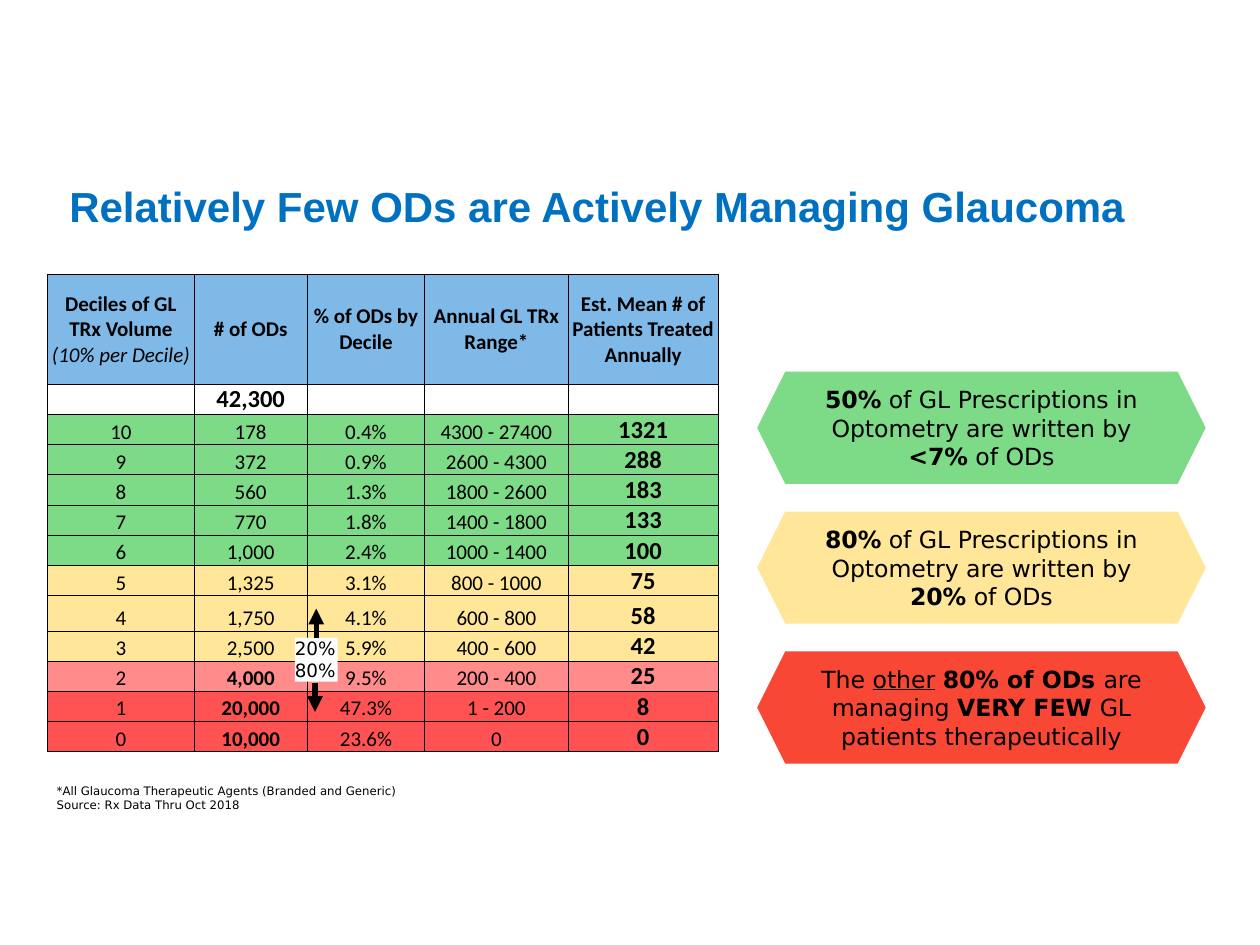
from lxml import etree
from pptx import Presentation
from pptx.dml.color import RGBColor
from pptx.enum.shapes import MSO_CONNECTOR, MSO_SHAPE
from pptx.enum.text import MSO_ANCHOR, MSO_AUTO_SIZE, PP_ALIGN
from pptx.oxml.ns import qn
from pptx.util import Inches, Pt

LEFT, CENTER = PP_ALIGN.LEFT, PP_ALIGN.CENTER
MIDDLE, BOTTOM, TOP = MSO_ANCHOR.MIDDLE, MSO_ANCHOR.BOTTOM, MSO_ANCHOR.TOP
HEXAGON, STRAIGHT = MSO_SHAPE.HEXAGON, MSO_CONNECTOR.STRAIGHT
FIT_SHAPE, NO_FIT = MSO_AUTO_SIZE.SHAPE_TO_FIT_TEXT, MSO_AUTO_SIZE.NONE

THEME = {
    "title": "0070C0", "black": "000000", "white": "FFFFFF", "header": "7FB9E8",
    "green": "7DDA86", "yellow": "FFE699", "pink": "FF8B8B", "red": "FF5353",
    "alert": "F84734",
    "title_font": "Arial", "table_font": "Calibri", "body_font": "DejaVu Sans",
    "title_size": 24, "cell_size": 12, "strong_size": 14,
    "callout_size": 13.5, "split_size": 10.5, "note_size": 6.75,
}

TITLE = "Relatively Few ODs are Actively Managing Glaucoma"
# A span is (text, styles): b bold, i italic, u underlined.
HEADERS = [
    [("Deciles of GL TRx Volume\v", "b"), ("(10% per Decile)", "i")],
    [("# of ODs", "b")],
    [("% of ODs by Decile", "b")],
    [("Annual GL TRx Range*", "b")],
    [("Est. Mean # of Patients Treated Annually", "b")],
]
TOTAL = ("", "42,300", "", "", "")
DECILES = [
    ("green", "10", "178", "0.4%", "4300 - 27400", "1321"),
    ("green", "9", "372", "0.9%", "2600 - 4300", "288"),
    ("green", "8", "560", "1.3%", "1800 - 2600", "183"),
    ("green", "7", "770", "1.8%", "1400 - 1800", "133"),
    ("green", "6", "1,000", "2.4%", "1000 - 1400", "100"),
    ("yellow", "5", "1,325", "3.1%", "800 - 1000", "75"),
    ("yellow", "4", "1,750", "4.1%", "600 - 800", "58"),
    ("yellow", "3", "2,500", "5.9%", "400 - 600", "42"),
    ("pink", "2", "4,000", "9.5%", "200 - 400", "25"),
    ("red", "1", "20,000", "47.3%", "1 - 200", "8"),
    ("red", "0", "10,000", "23.6%", "0", "0"),
]
COUNT_COLUMN, PATIENTS_COLUMN = 1, 4
BOLD_COUNT_FILLS = ("pink", "red")
COLUMN_WIDTHS = (1.16, 0.9, 0.93, 1.14, 1.19)
HEADER_HEIGHT, ROW_HEIGHT, TALL_HEIGHT = 0.87, 0.24, 0.28
TALL_DECILE = "4"

CALLOUTS = [
    ("green", [("50%", "b"), (" of GL Prescriptions in Optometry are written by ", ""),
               ("<7%", "b"), (" of ODs", "")]),
    ("yellow", [("80%", "b"), (" of GL Prescriptions in Optometry are written by ", ""),
                ("20%", "b"), (" of ODs", "")]),
    ("alert", [("The ", ""), ("other", "u"), (" ", ""), ("80% of ODs ", "b"),
               ("are managing ", ""), ("VERY FEW ", "b"),
               ("GL patients therapeutically", "")]),
]
NOTES = ["*All Glaucoma Therapeutic Agents (Branded and Generic)",
         "Source: Rx Data Thru Oct 2018"]
SPLIT = ["20%", "80%"]
SPLIT_ARROWS = [(2.51, 5.06, 4.83), (2.5, 5.42, 5.65)]  # x, start y, end y


def color(name):
    return RGBColor.from_string(THEME[name])


def paint(item, name):
    item.fill.solid()
    item.fill.fore_color.rgb = color(name)


def write(frame, paragraphs, font="body_font", size="callout_size", ink="black",
          align=LEFT, spacing=None, gap=None):
    """Fill a text frame; each paragraph is a plain string or a list of spans."""
    for index, spans in enumerate(paragraphs):
        para = frame.add_paragraph() if index else frame.paragraphs[0]
        para.alignment = align
        if spacing:
            para.line_spacing = spacing
        if gap:
            para.space_before = para.space_after = Pt(gap)
        if not spans:
            etree.SubElement(para._p, qn("a:endParaRPr"), sz=str(THEME[size] * 100))
            continue
        for text, styles in [(spans, "")] if isinstance(spans, str) else spans:
            for number, line in enumerate(text.split("\v")):
                if number:
                    para.add_line_break()
                if line:
                    span = para.add_run()
                    span.text = line
                    span.font.name = THEME[font]
                    span.font.size = Pt(THEME[size])
                    span.font.color.rgb = color(ink)
                    span.font.bold = "b" in styles
                    span.font.italic = "i" in styles
                    span.font.underline = "u" in styles


def set_margins(item, left, top, right, bottom):
    item.margin_left, item.margin_top = Inches(left), Inches(top)
    item.margin_right, item.margin_bottom = Inches(right), Inches(bottom)


def add_borders(cell):
    properties = cell._tc.get_or_add_tcPr()
    for side in ("a:lnL", "a:lnR", "a:lnT", "a:lnB"):
        line = etree.SubElement(properties, qn(side), w=str(Pt(0.5)))
        fill = etree.SubElement(line, qn("a:solidFill"))
        etree.SubElement(fill, qn("a:srgbClr"), val=THEME["black"])


def fill_cell(cell, spans, fill, anchor=BOTTOM, size="cell_size", gap=None):
    add_borders(cell)
    paint(cell, fill)
    set_margins(cell, 0.01, 0, 0.01, 0)
    cell.vertical_anchor = anchor
    write(cell.text_frame, [spans], font="table_font", size=size, align=CENTER, gap=gap)


def add_decile_table(page):
    heights = [HEADER_HEIGHT, ROW_HEIGHT] + [
        TALL_HEIGHT if row[1] == TALL_DECILE else ROW_HEIGHT for row in DECILES]
    table = page.shapes.add_table(
        len(heights), len(COLUMN_WIDTHS), Inches(0.38), Inches(2.18),
        Inches(sum(COLUMN_WIDTHS)), Inches(sum(heights))).table
    for column, width in zip(table.columns, COLUMN_WIDTHS):
        column.width = Inches(width)
    for row, height in zip(table.rows, heights):
        row.height = Inches(height)
    for column, spans in enumerate(HEADERS):
        fill_cell(table.cell(0, column), spans, "header", anchor=MIDDLE,
                  gap=None if column else 6)
    for row, (fill, *values) in enumerate([("white", *TOTAL), *DECILES], start=1):
        for column, value in enumerate(values):
            strong = column == PATIENTS_COLUMN or fill == "white"
            bold = strong or (column == COUNT_COLUMN and fill in BOLD_COUNT_FILLS)
            fill_cell(table.cell(row, column),
                      [(value, "b" if bold else "")] if value else "", fill,
                      size="strong_size" if strong and value else "cell_size")


def add_callouts(page):
    top, pitch = 2.95, 1.11
    for index, (fill, spans) in enumerate(CALLOUTS):
        shape = page.shapes.add_shape(HEXAGON, Inches(6.01), Inches(top + index * pitch),
                                      Inches(3.56), Inches(0.89))
        shape.shadow.inherit = False
        paint(shape, fill)
        shape.line.fill.background()
        frame = shape.text_frame
        frame.word_wrap = True
        frame.vertical_anchor = MIDDLE
        set_margins(frame, 0.07, 0.04, 0.07, 0.04)
        write(frame, [spans], align=CENTER)


def add_label(shapes, lines, at, size):
    box = shapes.add_textbox(*map(Inches, at))
    frame = box.text_frame
    frame.word_wrap = False
    frame.auto_size = FIT_SHAPE
    frame.vertical_anchor = TOP
    set_margins(frame, 0, 0, 0, 0)
    write(frame, lines, size=size)
    return box


def add_split_marker(page):
    group = page.shapes.add_group_shape()
    paint(add_label(group.shapes, SPLIT, (2.34, 5.06, 0.34, 0.35), "split_size"), "white")
    for x, start, end in SPLIT_ARROWS:
        arrow = group.shapes.add_connector(STRAIGHT, Inches(x), Inches(start),
                                           Inches(x), Inches(end))
        arrow.line.color.rgb = color("black")
        arrow.line.width = Pt(3)
        etree.SubElement(arrow.line._get_or_add_ln(), qn("a:tailEnd"), type="triangle")
        etree.SubElement(arrow._element.spPr, qn("a:effectLst"))


def main():
    deck = Presentation()
    deck.slide_width, deck.slide_height = Inches(10), Inches(7.5)
    page = deck.slides.add_slide(deck.slide_layouts[5])
    title = page.shapes.title
    title.left, title.top = Inches(0.45), Inches(1.11)
    title.width, title.height = Inches(8.62), Inches(1.09)
    title.text_frame.auto_size = NO_FIT
    title.text_frame.vertical_anchor = MIDDLE
    write(title.text_frame, [[(TITLE, "b")]], font="title_font", size="title_size",
          ink="title", spacing=0.9)
    add_decile_table(page)
    add_callouts(page)
    add_label(page.shapes, NOTES, (0.45, 6.22, 2.75, 0.23), "note_size")
    add_split_marker(page)
    deck.save("out.pptx")


if __name__ == "__main__":
    main()
